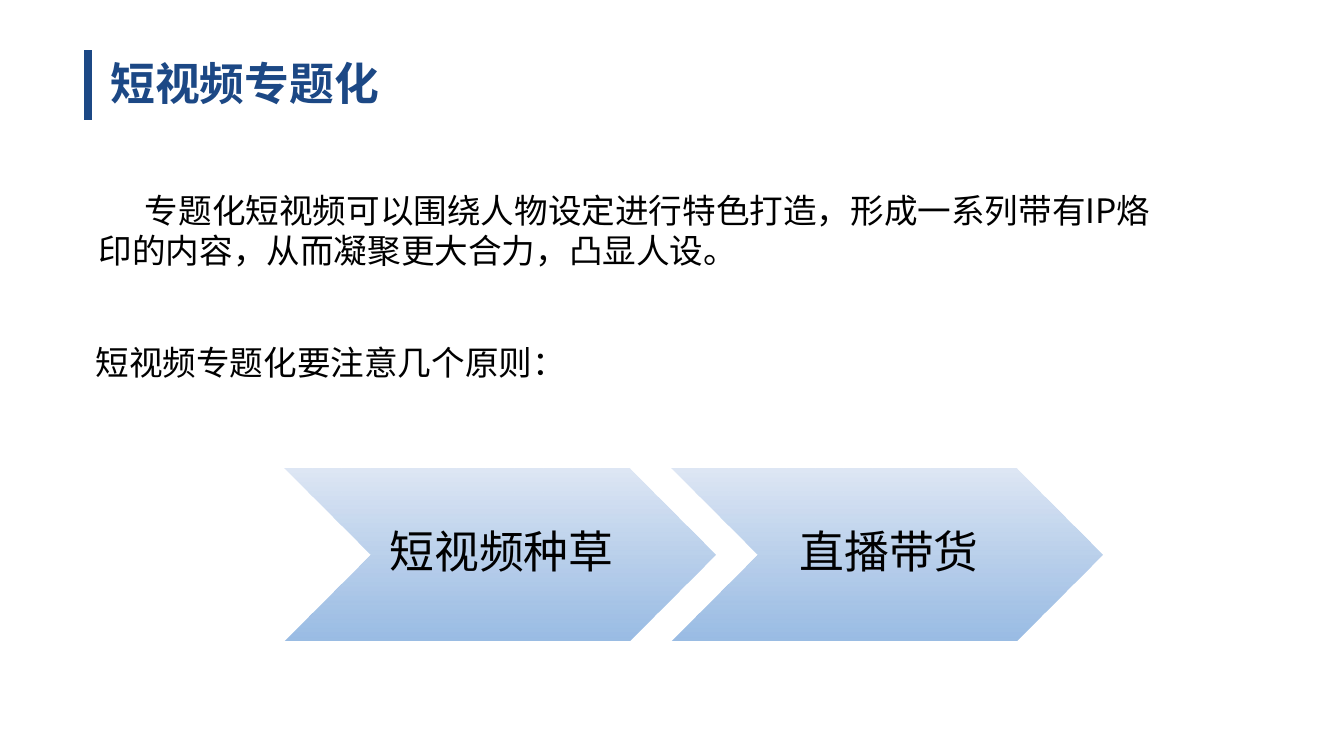
"""Build the slide on themed short videos with its two-step chevron flow."""
from dataclasses import dataclass

from lxml.etree import SubElement
from pptx import Presentation
from pptx.dml.color import RGBColor
from pptx.enum.shapes import MSO_CONNECTOR, MSO_SHAPE
from pptx.enum.text import MSO_ANCHOR, PP_ALIGN
from pptx.oxml.ns import qn
from pptx.slide import Slide
from pptx.util import Emu, Pt

FONT = "Noto Sans CJK SC"
COLORS = {"navy": "1C4885", "black": "000000", "pale": "DEE7F5", "sky": "92B7E2"}
STEPS = ["短视频种草", "直播带货"]
STEP_LEFT, STEP_TOP, STEP_WIDTH, STEP_HEIGHT, STEP_PITCH = 271, 446, 410, 164, 369


@dataclass
class Label:
    text: str
    left: int
    top: int
    width: int
    height: int
    size: int = 24
    color: str = "black"
    bold: bool = False
    indent: int = 0
    spacing: float = 1.0
    align: PP_ALIGN = PP_ALIGN.LEFT
    anchor: MSO_ANCHOR = MSO_ANCHOR.TOP
    inset_left: int = 10


LABELS = [
    Label("短视频专题化", 95, 48, 532, 113, size=32, color="navy", bold=True),
    Label("短视频专题化要注意几个原则：", 53, 309, 962, 102, indent=28, spacing=1.3),
    Label("专题化短视频可以围绕人物设定进行特色打造，形成一系列带有IP烙印的内容，"
          "从而凝聚更大合力，凸显人设。", 84, 176, 1030, 87, indent=44),
]


def px(n: int) -> Emu:
    return Emu(n * 9525)


def rgb(name: str) -> RGBColor:
    return RGBColor.from_string(COLORS[name])


def add_label(s: Slide, label: Label) -> None:
    sp = s.shapes.add_textbox(px(label.left), px(label.top), px(label.width), px(label.height))
    tf = sp.text_frame
    tf.word_wrap = True
    tf.vertical_anchor = label.anchor
    tf.margin_left = px(label.inset_left)
    p = tf.paragraphs[0]
    p.text = label.text
    p.alignment = label.align
    p.line_spacing = label.spacing
    if label.indent:
        p._p.get_or_add_pPr().set("indent", str(px(label.indent)))
    r = p.runs[0]
    r.font.name = FONT
    r.font.size = Pt(label.size)
    r.font.bold = label.bold
    r.font.color.rgb = rgb(label.color)
    SubElement(r.font._element, qn("a:ea")).set("typeface", FONT)


def add_title_bar(s: Slide) -> None:
    bar = s.shapes.add_connector(MSO_CONNECTOR.STRAIGHT, px(84), px(48), px(84), px(114))
    bar.line.color.rgb = rgb("navy")
    bar.line.width = Pt(6)
    SubElement(bar.element.spPr, qn("a:effectLst"))


def add_step(s: Slide, left: int, text: str) -> None:
    sp = s.shapes.add_shape(
        MSO_SHAPE.CHEVRON, px(left), px(STEP_TOP), px(STEP_WIDTH), px(STEP_HEIGHT))
    sp.shadow.inherit = False
    sp.line.fill.background()
    sp.fill.gradient()
    sp.fill.gradient_angle = 270
    for stop, name in zip(sp.fill.gradient_stops, ("pale", "sky")):
        stop.color.rgb = rgb(name)
    end_color = sp.element.spPr.findall(".//" + qn("a:srgbClr"))[-1]
    SubElement(end_color, qn("a:alpha")).set("val", "92000")
    add_label(s, Label(
        text, left + STEP_HEIGHT // 2, STEP_TOP, STEP_WIDTH - STEP_HEIGHT, STEP_HEIGHT,
        size=32, spacing=0.9, align=PP_ALIGN.CENTER, anchor=MSO_ANCHOR.MIDDLE, inset_left=13))


def main() -> None:
    prs = Presentation()
    prs.slide_width, prs.slide_height = px(1280), px(720)
    s = prs.slides.add_slide(prs.slide_layouts[6])
    add_title_bar(s)
    for label in LABELS:
        add_label(s, label)
    for i, text in enumerate(STEPS):
        add_step(s, STEP_LEFT + i * STEP_PITCH, text)
    prs.save("out.pptx")


if __name__ == "__main__":
    main()
